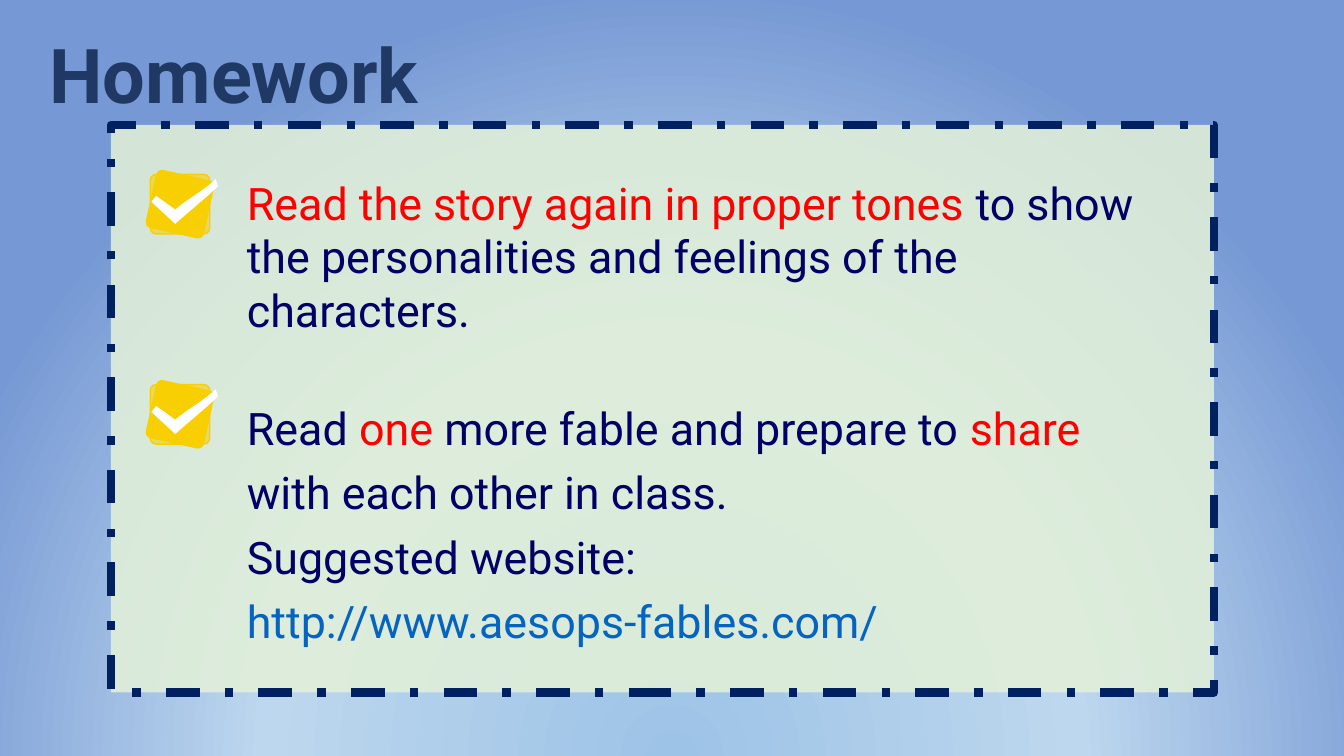
from lxml.etree import SubElement
from pptx import Presentation
from pptx.dml.color import RGBColor
from pptx.enum.dml import MSO_LINE
from pptx.enum.shapes import MSO_SHAPE
from pptx.enum.text import MSO_ANCHOR, MSO_AUTO_SIZE, PP_ALIGN
from pptx.oxml import parse_xml
from pptx.oxml.ns import nsdecls, qn
from pptx.util import Inches, Pt

NAVY, RED, LINK, GOLD = "000066", "FF0000", "0563C1", "F7CF03"

deck = Presentation()
deck.slide_width, deck.slide_height = Inches(13.33), Inches(7.5)
col, row = deck.slide_width / 100, deck.slide_height / 100
slide = deck.slides.add_slide(deck.slide_layouts[5])
shapes = slide.shapes


def paint(item, color, alpha=100):
    item.fill.solid()
    item.fill.fore_color.rgb = RGBColor.from_string(color)
    if alpha < 100:
        tint = item.fill._xPr.find(qn("a:solidFill"))[0]
        SubElement(tint, qn("a:alpha"), val=str(alpha * 1000))
    item.line.fill.background()
    item.shadow.inherit = False


def write(para, text, color, size, bold=False):
    run = para.add_run()
    run.text = text
    run.font.name, run.font.size, run.font.bold = "Roboto", Pt(size), bold
    run.font.color.rgb = RGBColor.from_string(color)


stops = "".join(
    f'<a:gs pos="{pos * 1000}"><a:srgbClr val="{color}"/></a:gs>'
    for pos, color in [(0, "9DC3E6"), (53, "BDD7EE"), (100, "7698D4")]
)
slide.element.cSld.insert(0, parse_xml(
    f'<p:bg {nsdecls("p", "a")}><p:bgPr><a:gradFill rotWithShape="1">'
    f'<a:gsLst>{stops}</a:gsLst><a:path path="circle">'
    '<a:fillToRect l="50000" t="130000" r="50000" b="-30000"/></a:path>'
    '</a:gradFill><a:effectLst/></p:bgPr></p:bg>'
))

title = shapes.title
title.left, title.top = int(2.93 * col), int(3.07 * row)
title.width, title.height = int(33.91 * col), int(13.47 * row)
frame = title.text_frame
frame.word_wrap = False
frame.auto_size = MSO_AUTO_SIZE.NONE
frame.vertical_anchor = MSO_ANCHOR.TOP
frame.paragraphs[0].alignment = PP_ALIGN.LEFT
write(frame.paragraphs[0], "Homework", "203864", 54, True)

panel = shapes.add_shape(
    MSO_SHAPE.RECTANGLE, int(8.25 * col), int(16.53 * row), int(82.07 * col), int(75.07 * row)
)
paint(panel, "E2F0D9", 88)
panel.line.color.rgb = RGBColor.from_string("002060")
panel.line.width = Pt(6)
panel.line.dash_style = MSO_LINE.DASH_DOT

tasks = [
    (1, 0, [("Read the story again in proper tones ", RED),
            ("to show the personalities and feelings of the characters.", NAVY)]),
    (1.2, 38, [("Read ", NAVY), ("one ", RED), ("more fable and prepare to ", NAVY),
               ("share ", RED), ("with each other in class.", NAVY)]),
    (1.2, 0, [("Suggested website:", NAVY)]),
    (1.2, 0, [("http://www.aesops-fables.com/", LINK)]),
]
body = shapes.add_textbox(
    int(17.63 * col), int(22.53 * row), int(68.12 * col), int(64.53 * row)
).text_frame
body.word_wrap = True
for num, (pitch, gap, runs) in enumerate(tasks):
    para = body.add_paragraph() if num else body.paragraphs[0]
    para.line_spacing = pitch
    if gap:
        para.space_before = Pt(gap)
    for text, color in runs:
        write(para, text, color, 32)

curves = [
    [(1.14, 0.2), (0.86, 0.46), (0.69, 0.59), (0.42, 0.83)],
    [(0.42, 0.59), (0.63, 0.41), (0.9, 0.27), (1.1, 0.08)],
]
arcs = []
for curve in curves:
    arc = []
    for step in range(9):
        t = step / 8
        parts = [(1 - t) ** 3, 3 * t * (1 - t) ** 2, 3 * t * t * (1 - t), t ** 3]
        arc.append([sum(p * pt[axis] for p, pt in zip(parts, curve)) for axis in (0, 1)])
    arcs.append(arc)
tick = [(1.1, 0.08), *arcs[0], (0.02, 0.46), (0.1, 0.36), *arcs[1]]

side, left = int(4.43 * col), int(11.18 * col)
for num in range(2):
    top = int((23.07 + 27.8 * num) * row)
    for angle, alpha in [(12.5, 100), (0, 58)]:
        tile = shapes.add_shape(MSO_SHAPE.ROUNDED_RECTANGLE, left, top, side, side)
        tile.adjustments[0] = 0.1
        tile.rotation = angle
        paint(tile, GOLD, alpha)
    tile.line.color.rgb = RGBColor.from_string(GOLD)
    tile.line.width = Pt(1)
    spots = [(int(left + x * side), int(top + y * side)) for x, y in tick]
    pen = shapes.build_freeform(*spots[0])
    pen.add_line_segments(spots[1:], close=True)
    paint(pen.convert_to_shape(), "FFFFFF")

deck.save("out.pptx")
